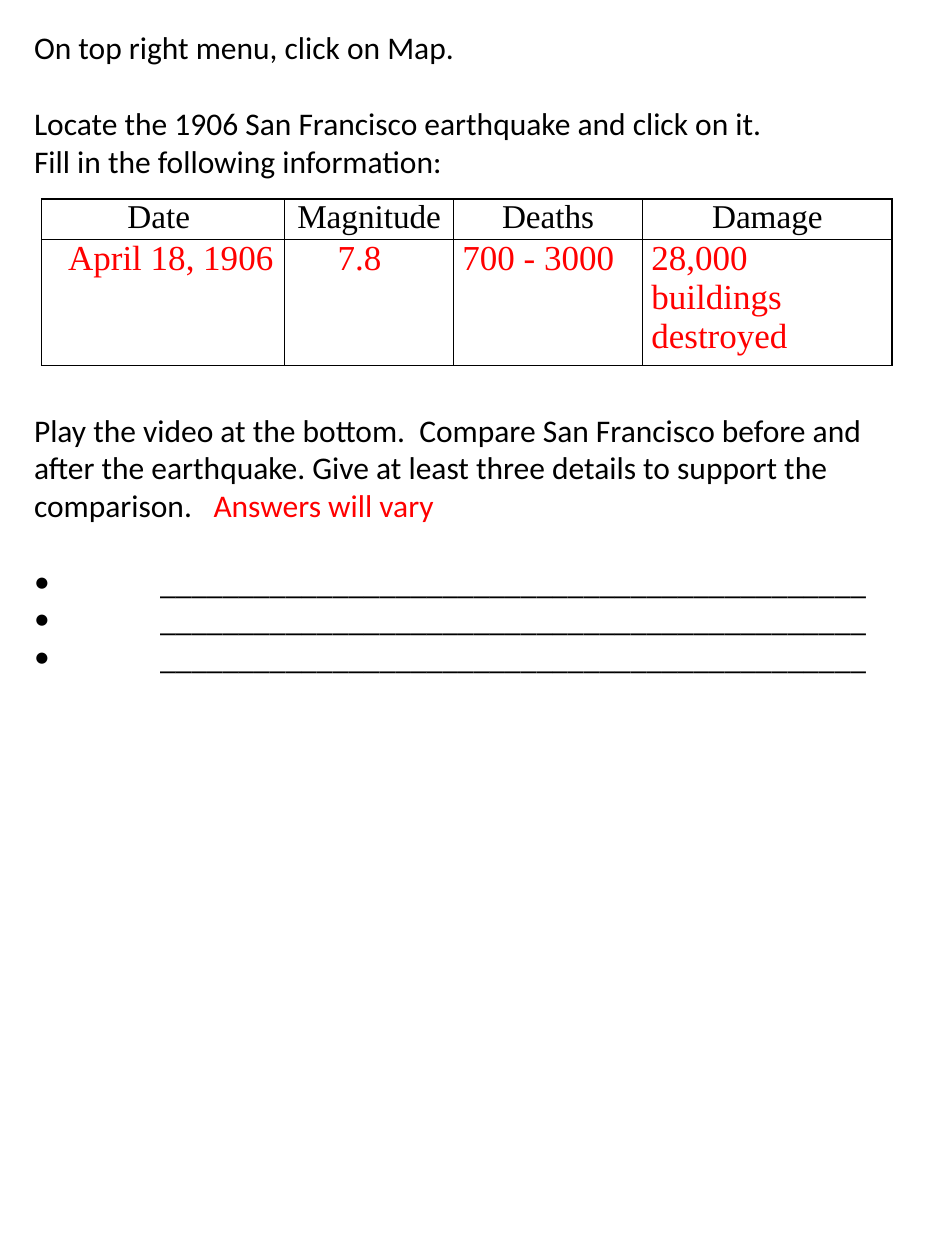
"""Build an earthquake worksheet page with instructions, a fact table and answer lines."""
from lxml import etree
from pptx import Presentation
from pptx import util as u
from pptx.dml import color
from pptx.enum import text
from pptx.oxml import ns

BLACK, RED = "000000", "FF0000"
LINE = 22


def style(span, size, name, shade):
    for key, value in {"size": u.Pt(size), "name": name, "bold": False}.items():
        setattr(span.font, key, value)
    span.font.color.rgb = color.RGBColor.from_string(shade)


def add_node(parent, tag, **values):
    return etree.SubElement(parent, ns.qn(tag), values)


deck = Presentation()
deck.slide_width, deck.slide_height = u.Inches(7.5), u.Inches(10)
page = deck.slides.add_slide(deck.slide_layouts[1])
title, body = page.placeholders
title._element.getparent().remove(title._element)

place = {"left": 0.17, "top": 0.17, "width": 7.08, "height": 5.25}
for key, value in place.items():
    setattr(body, key, u.Inches(value))
frame = body.text_frame
frame.word_wrap = True
frame.auto_size = text.MSO_AUTO_SIZE.NONE
frame.vertical_anchor = text.MSO_ANCHOR.TOP

answer = "_" * 45
lines = [
    (0, False, ["On top right menu, click on Map."]),
    (1, False, ["Locate the 1906 San Francisco earthquake and click on it."]),
    (0, False, ["Fill in the following information:"]),
    (6, False, ["Play the video at the bottom.  Compare San Francisco before and after "
                "the earthquake. Give at least three details to support the comparison.   ",
                "Answers will vary"]),
    (1, True, [answer]),
    (0, True, [answer]),
    (0, True, [answer]),
]
for index, (gap, bulleted, words) in enumerate(lines):
    para = frame.paragraphs[0] if index == 0 else frame.add_paragraph()
    para.space_before = u.Pt(gap * LINE)
    for wording, shade in zip(words, (BLACK, RED)):
        span = para.add_run()
        span.text = wording
        style(span, 18, "Calibri", shade)
    props = para._p.get_or_add_pPr()
    indent = u.Inches(1) if bulleted else 0
    props.set("marL", str(indent))
    props.set("indent", str(-indent))
    if bulleted:
        add_node(props, "a:buFont", typeface="Calibri")
        add_node(props, "a:buChar", char="•")
    else:
        add_node(props, "a:buNone")

widths, heights = [1.93, 1.34, 1.5, 1.98], [0.32, 1]
grid = page.shapes.add_table(2, 4, u.Inches(0.33), u.Inches(1.58),
                             u.Inches(sum(widths)), u.Inches(sum(heights))).table
grid.first_row = grid.horz_banding = False
for column, width in zip(grid.columns, widths):
    column.width = u.Inches(width)
for row, height in zip(grid.rows, heights):
    row.height = u.Inches(height)

CENTER, LEFT = text.PP_ALIGN.CENTER, text.PP_ALIGN.LEFT
facts = [
    (19, BLACK, CENTER, [("Date", 0.07, 0.14), ("Magnitude", 0.07, 0.07),
                         ("Deaths", 0.07, 0.07), ("Damage", 0.07, 0.07)]),
    (20, RED, LEFT, [("April 18, 1906", 0.21, 0), ("7.8", 0.42, 0.07),
                     ("700 - 3000", 0.07, 0.07), ("28,000 buildings destroyed", 0.07, 0.07)]),
]
for row, (size, shade, align, entries) in zip(grid.rows, facts):
    for cell, (wording, left, right) in zip(row.cells, entries):
        margins = {"margin_left": left, "margin_right": right, "margin_top": 0, "margin_bottom": 0}
        for key, value in margins.items():
            setattr(cell, key, u.Inches(value))
        para = cell.text_frame.paragraphs[0]
        para.alignment = align
        span = para.add_run()
        span.text = wording
        style(span, size, "Times New Roman", shade)
        props = cell._tc.get_or_add_tcPr()
        for side in "LRTB":
            border = add_node(props, f"a:ln{side}", w=str(u.Pt(1)))
            add_node(add_node(border, "a:solidFill"), "a:srgbClr", val=BLACK)
        cell.fill.background()

deck.save("out.pptx")
